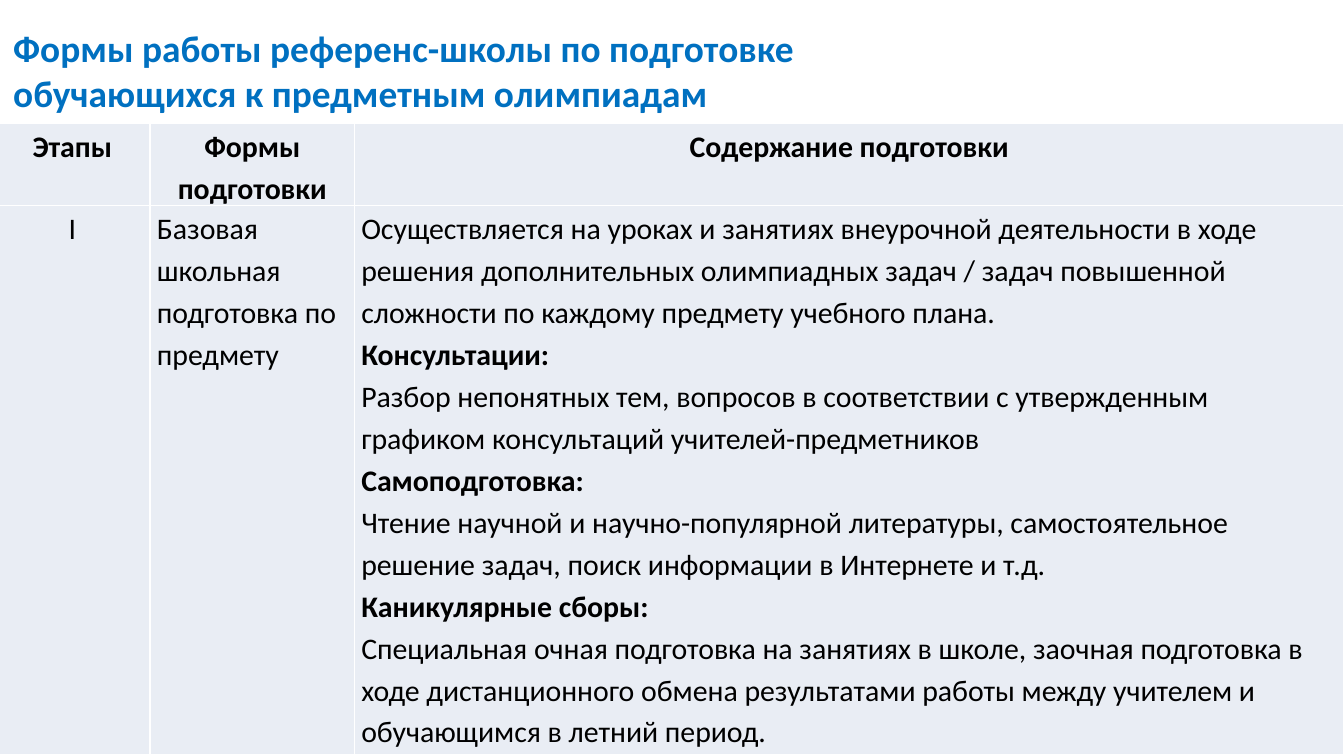
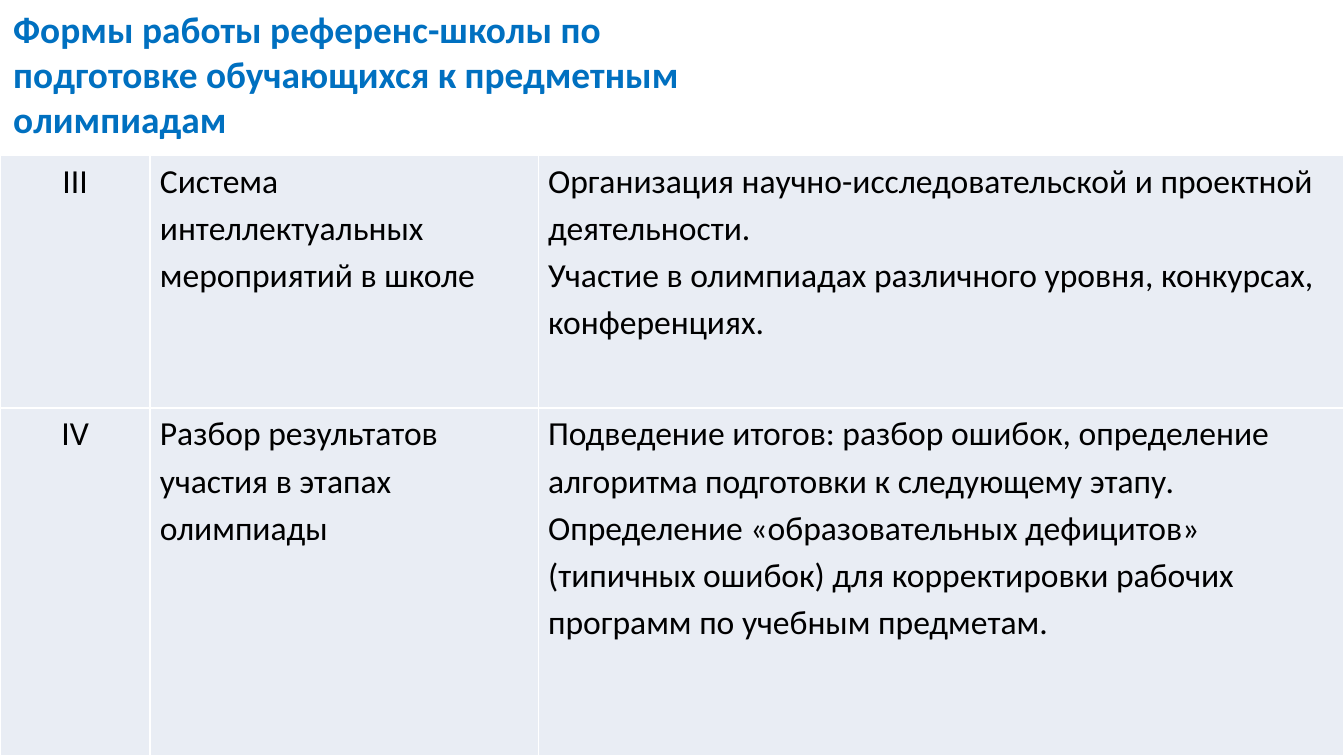
"""Build two slides on forms of preparing pupils for subject olympiads."""
from lxml import etree
from pptx import Presentation
from pptx.dml.color import RGBColor
from pptx.enum import text
from pptx.oxml import ns
from pptx.util import Pt

FONT = "Calibri"
BLUE, BLACK, WHITE, PALE = "0070C0", "000000", "FFFFFF", "E9EDF4"
TITLE = "Формы работы референс-школы по подготовке обучающихся к предметным олимпиадам"


def rgb(value):
    return RGBColor.from_string(value)


def write(tf, paragraphs, size, color, bold=()):
    tf.text = "\n".join(paragraphs)
    tf.word_wrap = True
    for i, p in enumerate(tf.paragraphs):
        for r in p.runs:
            r.font.name = FONT
            r.font.size = Pt(size)
            r.font.color.rgb = rgb(color)
            r.font.bold = i in bold


slides = [
    {
        "title": (10, 451, 78),
        "table": (-3, 66),
        "cols": (83.5, 109.5, 530),
        "rows": (44, 294.5),
        "size": 16,
        "margin": 3.6,
        "header": True,
        "cells": [
            [["Этапы"], ["Формы подготовки"], ["Содержание подготовки"]],
            [
                ["I"],
                ["Базовая школьная подготовка по предмету"],
                [
                    "Осуществляется на уроках и занятиях внеурочной деятельности в ходе решения "
                    "дополнительных олимпиадных задач / задач повышенной сложности по каждому "
                    "предмету учебного плана.",
                    "Консультации:",
                    "Разбор непонятных тем, вопросов в соответствии с утвержденным графиком "
                    "консультаций учителей-предметников",
                    "Самоподготовка:",
                    "Чтение научной и научно-популярной литературы, самостоятельное решение задач, "
                    "поиск информации в Интернете и т.д.",
                    "Каникулярные сборы:",
                    "Специальная очная подготовка на занятиях в школе, заочная подготовка в ходе "
                    "дистанционного обмена результатами работы между учителем и обучающимся в "
                    "летний период.",
                ],
            ],
        ],
    },
    {
        "title": (0, 428, 104),
        "table": (0, 83),
        "cols": (80.5, 208, 431.5),
        "rows": (135.5, 186.5),
        "size": 18,
        "margin": 5.2,
        "header": False,
        "cells": [
            [
                ["III"],
                ["Система интеллектуальных мероприятий в школе"],
                [
                    "Организация научно-исследовательской и проектной деятельности.",
                    "Участие в олимпиадах различного уровня, конкурсах, конференциях.",
                ],
            ],
            [
                ["IV"],
                ["Разбор результатов участия в этапах олимпиады"],
                [
                    "Подведение итогов: разбор ошибок, определение алгоритма подготовки к "
                    "следующему этапу.",
                    "Определение «образовательных дефицитов» (типичных ошибок) для корректировки "
                    "рабочих программ по учебным предметам.",
                ],
            ],
        ],
    },
]

prs = Presentation()
prs.slide_width, prs.slide_height = Pt(720), Pt(405)

for data in slides:
    s = prs.slides.add_slide(prs.slide_layouts[6])
    top, width, height = data["title"]
    sp = s.shapes.add_textbox(Pt(0), Pt(top), Pt(width), Pt(height))
    write(sp.text_frame, [TITLE], 20, BLUE, bold=(0,))

    left, top = data["table"]
    cols, rows = data["cols"], data["rows"]
    table = s.shapes.add_table(len(rows), len(cols), Pt(left), Pt(top),
                               Pt(sum(cols)), Pt(sum(rows))).table
    table.first_row = table.horz_banding = False
    for col, width in zip(table.columns, cols):
        col.width = Pt(width)
    for row, height in zip(table.rows, rows):
        row.height = Pt(height)

    for i, line in enumerate(data["cells"]):
        for j, paragraphs in enumerate(line):
            cell = table.cell(i, j)
            header = data["header"] and i == 0
            bold = [k for k, t in enumerate(paragraphs) if header or t.endswith(":")]
            write(cell.text_frame, paragraphs, data["size"], BLACK, bold)
            for p in cell.text_frame.paragraphs:
                p.line_spacing = 1.15
                if header or j == 0:
                    p.alignment = text.PP_ALIGN.CENTER
            cell.margin_left = cell.margin_right = Pt(data["margin"])
            cell.margin_top = cell.margin_bottom = Pt(0)
            tcPr = cell._tc.get_or_add_tcPr()
            for side in ("lnL", "lnR", "lnT", "lnB"):
                ln = etree.SubElement(tcPr, ns.qn("a:" + side), w=str(Pt(1)))
                fill = etree.SubElement(ln, ns.qn("a:solidFill"))
                etree.SubElement(fill, ns.qn("a:srgbClr"), val=WHITE)
            cell.fill.solid()
            cell.fill.fore_color.rgb = rgb(PALE)

prs.save("out.pptx")
